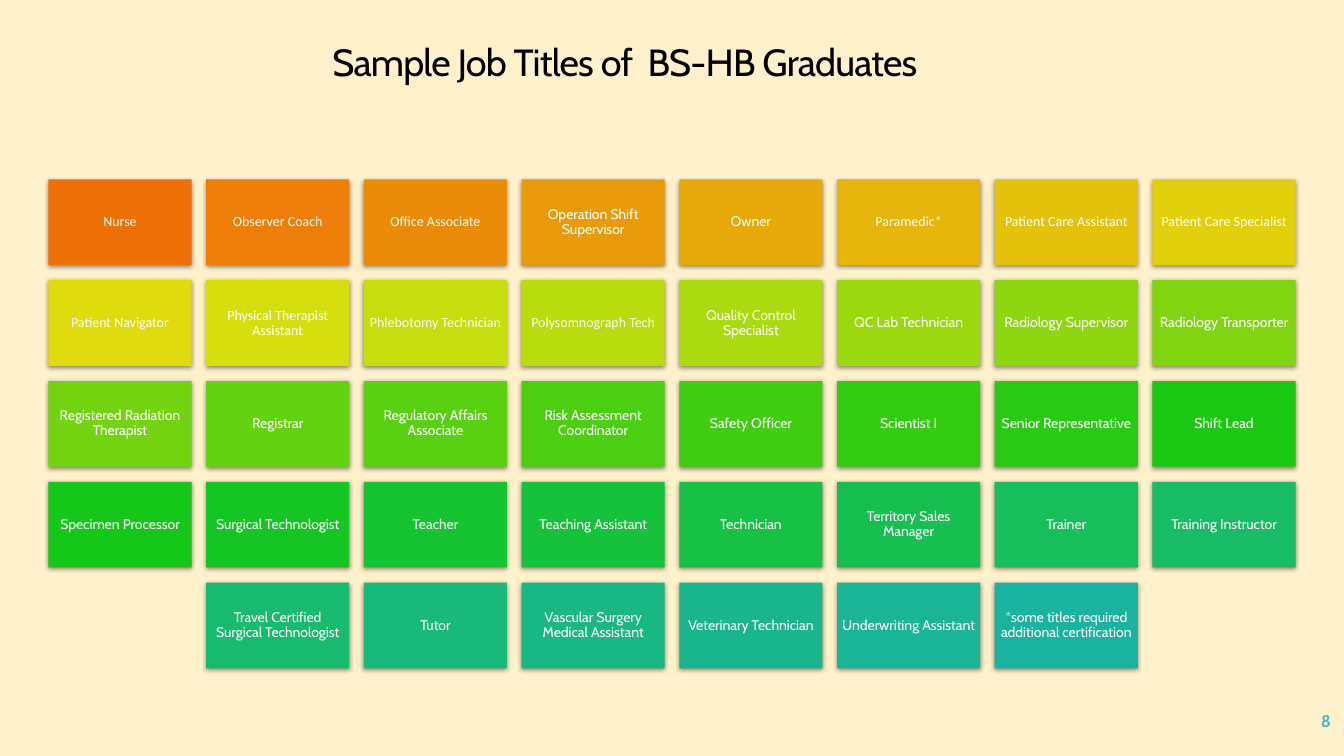
import colorsys
from dataclasses import dataclass

import lxml.etree
import pptx
import pptx.dml.color
import pptx.enum.shapes
import pptx.enum.text
import pptx.oxml.ns
import pptx.util

Inches = pptx.util.Inches
ALIGN = pptx.enum.text.PP_ALIGN


@dataclass(frozen=True)
class Theme:
    background: str = "FFF1CB"
    title_ink: str = "000000"
    card_ink: str = "FFFFFF"
    number_ink: str = "40BAD2"
    first_card: tuple = (27.1, 48.2, 93.5)  # hue in degrees, lightness and saturation in %
    last_card: tuple = (172.2, 40.2, 74.6)
    font: str = "Cabin"
    alternate_font: str = "Calibri"
    title_size: float = 27
    number_size: float = 12
    card_size: float = 10


theme = Theme()


def write(shape, text, *, size, color, font=theme.font, bold=False, align=ALIGN.CENTER,
          line_spacing=0.9, space_after=0, tracking=None, inset=None):
    """Fill a shape with one vertically centred paragraph; tracking is in points."""
    frame = shape.text_frame
    frame.word_wrap = True
    frame.auto_size = pptx.enum.text.MSO_AUTO_SIZE.NONE
    frame.vertical_anchor = pptx.enum.text.MSO_ANCHOR.MIDDLE
    if inset is not None:
        frame.margin_left = frame.margin_right = Inches(inset)
        frame.margin_top = frame.margin_bottom = Inches(inset)
    paragraph = frame.paragraphs[0]
    paragraph.alignment = align
    paragraph.line_spacing = line_spacing
    paragraph.space_after = pptx.util.Pt(space_after)
    run = paragraph.add_run()
    run.text = text
    run.font.name = font
    run.font.size = pptx.util.Pt(size)
    run.font.bold = bold
    run.font.color.rgb = pptx.dml.color.RGBColor.from_string(color)
    if tracking is not None:
        run.font._element.set("spc", str(round(tracking * 100)))


def add_soft_shadow(shape):
    shape.shadow.inherit = False
    effects = shape._element.spPr.find(pptx.oxml.ns.qn("a:effectLst"))
    shadow = lxml.etree.SubElement(
        effects, pptx.oxml.ns.qn("a:outerShdw"), blurRad=str(pptx.util.Pt(3.5)),
        dist=str(pptx.util.Pt(1.1)), dir="5400000", algn="ctr", rotWithShape="0")
    black = lxml.etree.SubElement(shadow, pptx.oxml.ns.qn("a:srgbClr"), val="000000")
    lxml.etree.SubElement(black, pptx.oxml.ns.qn("a:alpha"), val="45000")


presentation = pptx.Presentation()
presentation.slide_width = Inches(13.33)
presentation.slide_height = Inches(7.5)
slide = presentation.slides.add_slide(presentation.slide_layouts[5])
slide.background.fill.solid()
slide.background.fill.fore_color.rgb = pptx.dml.color.RGBColor.from_string(theme.background)

heading = slide.shapes.title
heading.left, heading.top = Inches(0), Inches(0.4)
heading.width, heading.height = Inches(12.39), Inches(0.47)
write(heading, "Sample Job Titles of  BS-HB Graduates", size=theme.title_size,
      color=theme.title_ink, tracking=-0.6)

job_rows = [
    ["Nurse", "Observer Coach", "Office Associate", "Operation Shift Supervisor",
     "Owner", "Paramedic*", "Patient Care Assistant", "Patient Care Specialist"],
    ["Patient Navigator", "Physical Therapist Assistant", "Phlebotomy Technician",
     "Polysomnograph Tech", "Quality Control Specialist", "QC Lab Technician",
     "Radiology Supervisor", "Radiology Transporter"],
    ["Registered Radiation Therapist", "Registrar", "Regulatory Affairs Associate",
     "Risk Assessment Coordinator", "Safety Officer", "Scientist I",
     "Senior Representative", "Shift Lead"],
    ["Specimen Processor", "Surgical Technologist", "Teacher", "Teaching Assistant",
     "Technician", "Territory Sales Manager", "Trainer", "Training Instructor"],
    ["Travel Certified Surgical Technologist", "Tutor",
     "Vascular Surgery Medical Assistant", "Veterinary Technician",
     "Underwriting Assistant", "*some titles required additional certification"],
]
alternate_font_jobs = {*job_rows[0][:3], *job_rows[0][5:], *job_rows[1][:4]}

columns = len(job_rows[0])
grid_left, grid_top = 0.48, 1.78
card_width, card_height = 1.42, 0.85
row_step = card_height + 0.15
column_step = (13.33 - 2 * grid_left - card_width) / (columns - 1)
last_index = sum(len(row) for row in job_rows) - 1

card_index = 0
for row_index, row in enumerate(job_rows):
    row_left = grid_left + (columns - len(row)) / 2 * column_step
    for column_index, job in enumerate(row):
        card = slide.shapes.add_shape(
            pptx.enum.shapes.MSO_SHAPE.RECTANGLE,
            Inches(row_left + column_index * column_step),
            Inches(grid_top + row_index * row_step),
            Inches(card_width), Inches(card_height))
        share = card_index / last_index
        hue, lightness, saturation = (
            start + (end - start) * share
            for start, end in zip(theme.first_card, theme.last_card))
        channels = colorsys.hls_to_rgb(hue / 360, lightness / 100, saturation / 100)
        card.fill.solid()
        card.fill.fore_color.rgb = pptx.dml.color.RGBColor(
            *(round(channel * 255) for channel in channels))
        card.line.fill.background()
        add_soft_shadow(card)
        font = theme.alternate_font if job in alternate_font_jobs else theme.font
        write(card, job, size=theme.card_size, color=theme.card_ink, font=font, inset=0.04)
        card_index += 1

page_number = slide.shapes.add_textbox(Inches(11.63), Inches(6.95), Inches(1.67), Inches(0.4))
write(page_number, "8", size=theme.number_size, color=theme.number_ink, bold=True,
      align=ALIGN.RIGHT, line_spacing=1.0, space_after=6)

presentation.save("out.pptx")
